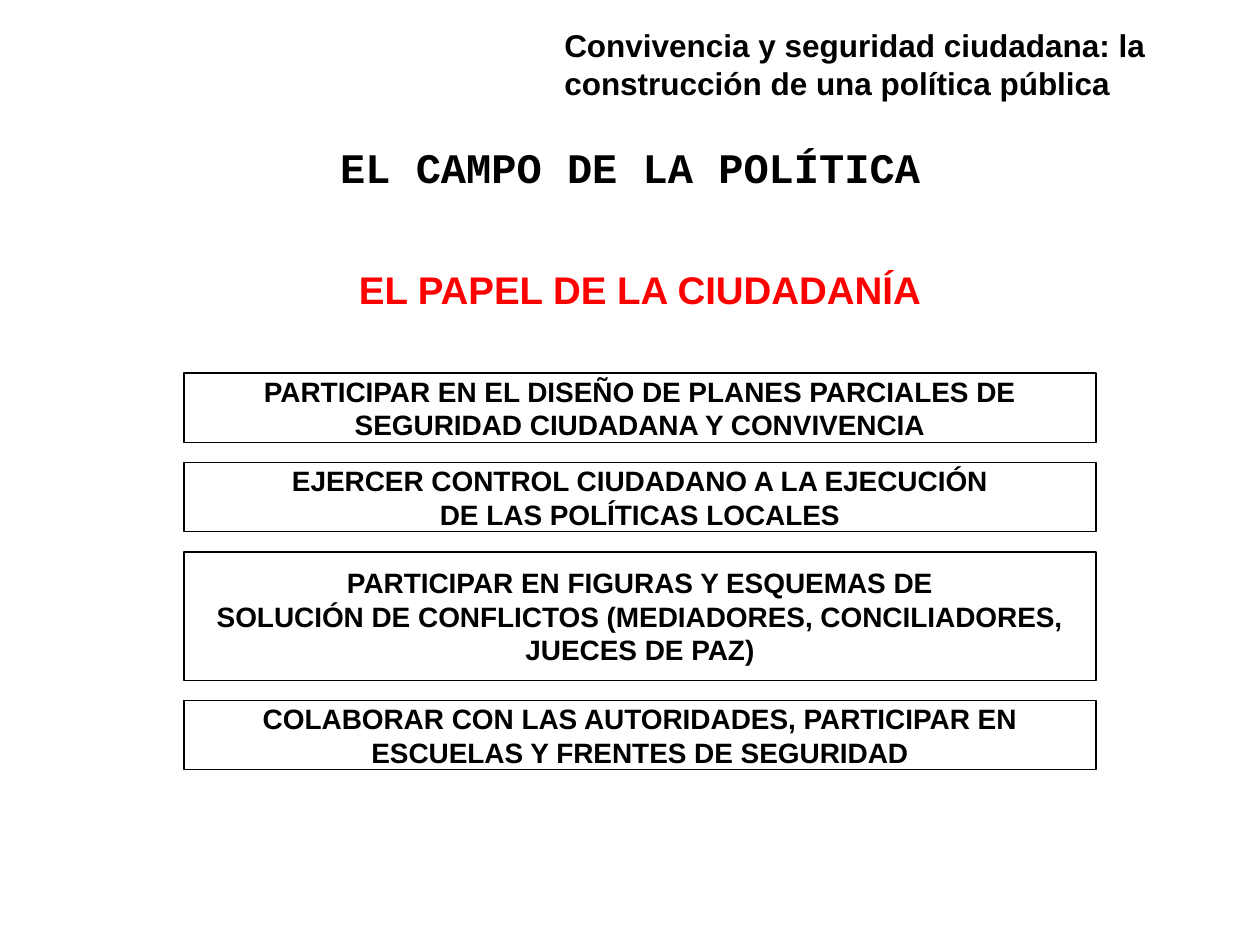
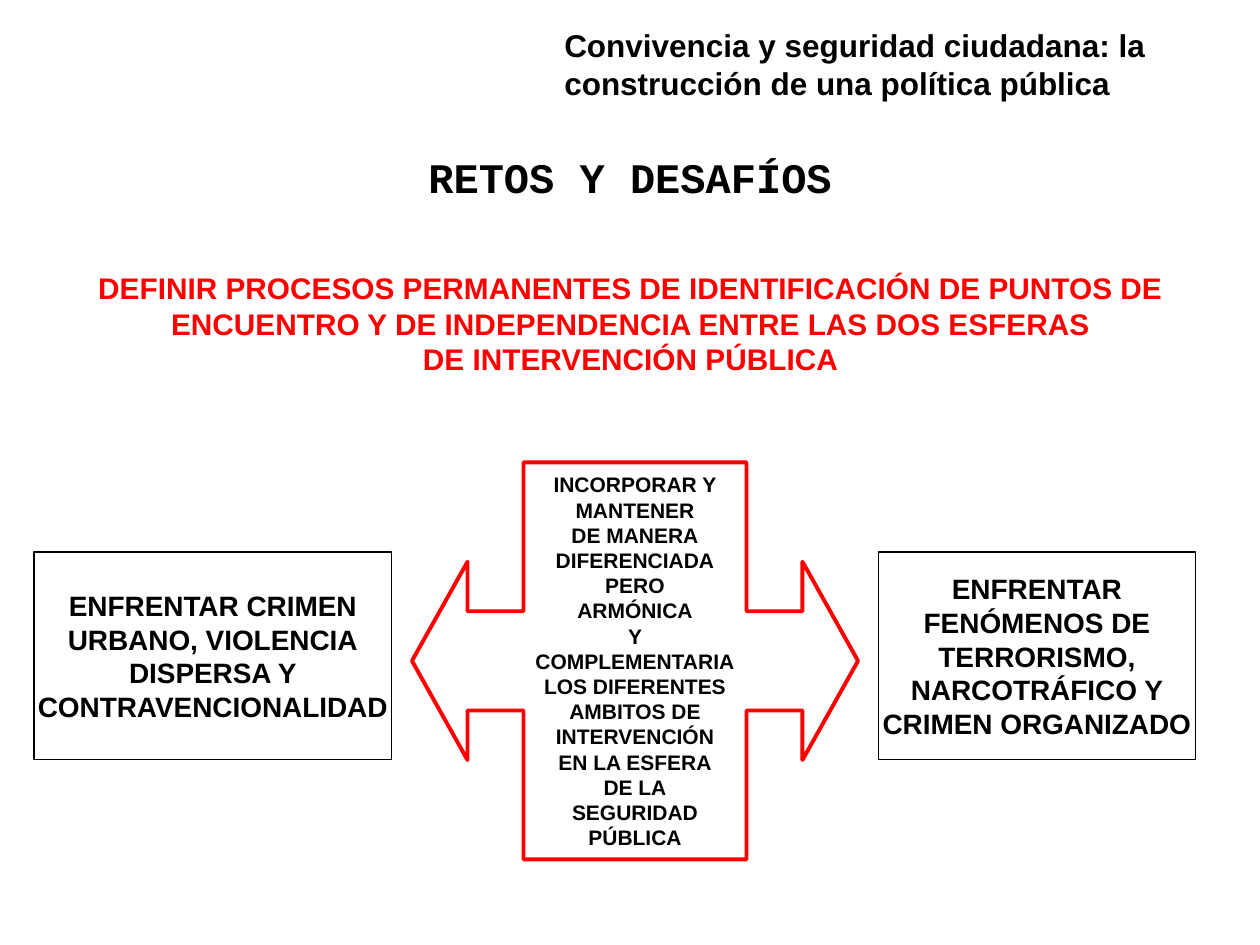
from pptx import Presentation
from pptx.dml.color import RGBColor
from pptx.enum.shapes import MSO_SHAPE as Shape
from pptx.enum.text import MSO_ANCHOR as Anchor, MSO_AUTO_SIZE as AutoSize, PP_ALIGN as Align
from pptx.util import Inches, Pt

COLORS = {"ink": "000000", "accent": "FF0000", "paper": "FFFFFF"}
BODY_FONT, TITLE_FONT = "Arial", "Courier New"
COLUMNS, ROWS = 100, 75
GAP = 1.6
HEADER = "Convivencia y seguridad ciudadana: la construcción de una política pública"


class SlideBuilder:
    """Holds the deck, its style and the slide being filled; places are in grid columns and rows."""

    def __init__(self):
        self.deck = Presentation()
        self.deck.slide_width, self.deck.slide_height = Inches(10), Inches(7.5)
        self.page = None

    def area(self, column, row, columns, rows):
        across = self.deck.slide_width / COLUMNS
        down = self.deck.slide_height / ROWS
        return [round(n) for n in (column * across, row * down, columns * across, rows * down)]

    def color(self, name):
        return RGBColor.from_string(COLORS[name])

    def set_text(self, box, text, size, color="ink", font=BODY_FONT, align=Align.CENTER,
                 anchor=Anchor.MIDDLE, wrap=False):
        frame = box.text_frame
        frame.text = text
        frame.auto_size = AutoSize.NONE
        frame.word_wrap = wrap
        frame.vertical_anchor = anchor
        for para in frame.paragraphs:
            para.alignment = align
            for span in para.runs:
                span.font.name, span.font.size, span.font.bold = font, Pt(size), True
                span.font.color.rgb = self.color(color)

    def start(self, title, row, rows):
        """Adds a page with its title and the shared header."""
        self.page = self.deck.slides.add_slide(self.deck.slide_layouts[5])
        self.page.background.fill.solid()
        self.page.background.fill.fore_color.rgb = self.color("paper")
        heading = self.page.shapes.title
        heading.left, heading.top, heading.width, heading.height = self.area(5, row, 90, rows)
        self.set_text(heading, title, 24, font=TITLE_FONT, anchor=Anchor.TOP, wrap=True)
        heading.text_frame.margin_top = Inches(0.13)
        self.label(HEADER, (43.8, 1.6, 53.5, 6.8), 18, align=Align.LEFT,
                   anchor=Anchor.TOP, wrap=True)

    def label(self, text, place, size, **style):
        self.set_text(self.page.shapes.add_textbox(*self.area(*place)), text, size, **style)

    def outline(self, text, place, size=16, kind=Shape.RECTANGLE, line="ink", weight=0.75):
        """Adds an unfilled shape with a coloured border and centred text."""
        box = self.page.shapes.add_shape(kind, *self.area(*place))
        box.shadow.inherit = False
        box.fill.background()
        box.line.color.rgb = self.color(line)
        box.line.width = Pt(weight)
        self.set_text(box, text, size)
        return box


def add_citizen_role(builder):
    builder.start("EL CAMPO DE LA POLÍTICA", 9.9, 3.1)
    builder.label("EL PAPEL DE LA CIUDADANÍA", (18.5, 20.2, 64.6, 5.5), 22, color="accent")
    duties = [
        ("PARTICIPAR EN EL DISEÑO DE PLANES PARCIALES DE\n"
         "SEGURIDAD CIUDADANA Y CONVIVENCIA", 5.5),
        ("EJERCER CONTROL CIUDADANO A LA EJECUCIÓN\nDE LAS POLÍTICAS LOCALES", 5.5),
        ("PARTICIPAR EN FIGURAS Y ESQUEMAS DE\n"
         "SOLUCIÓN DE CONFLICTOS (MEDIADORES, CONCILIADORES,\nJUECES DE PAZ)", 10.2),
        ("COLABORAR CON LAS AUTORIDADES, PARTICIPAR EN\n"
         "ESCUELAS Y FRENTES DE SEGURIDAD", 5.5),
    ]
    row = 29.6
    for duty, rows in duties:
        builder.outline(duty, (14.6, row, 72.4, rows))
        row += rows + GAP


def add_challenges(builder):
    builder.start("RETOS Y DESAFÍOS", 10.7, 4.8)
    builder.label("DEFINIR PROCESOS PERMANENTES DE IDENTIFICACIÓN DE PUNTOS DE\n"
                  "ENCUENTRO Y DE INDEPENDENCIA ENTRE LAS DOS ESFERAS\n"
                  "DE INTERVENCIÓN PÚBLICA", (27.2, 24.1, 45.7, 3.1), 17, color="accent")
    crime_column, crime_width, arrow_width = 2.7, 28.4, 35.4
    arrow_column = crime_column + crime_width + GAP
    terror_column = arrow_column + arrow_width + GAP
    arrow = builder.outline(
        "INCORPORAR Y\nMANTENER\nDE MANERA\nDIFERENCIADA\nPERO\nARMÓNICA\nY\nCOMPLEMENTARIA\n"
        "LOS DIFERENTES\nAMBITOS DE\nINTERVENCIÓN\nEN LA ESFERA\nDE LA\nSEGURIDAD\nPÚBLICA",
        (arrow_column, 36.7, arrow_width, 31.5), 12,
        Shape.LEFT_RIGHT_ARROW_CALLOUT, "accent", 2.25)
    for index, share in enumerate((0.25, 0.25, 0.14, 0.5)):
        arrow.adjustments[index] = share
    builder.outline("ENFRENTAR CRIMEN\nURBANO, VIOLENCIA\nDISPERSA Y\nCONTRAVENCIONALIDAD",
                    (crime_column, 43.8, crime_width, 16.5))
    builder.outline("ENFRENTAR\nFENÓMENOS DE\nTERRORISMO,\nNARCOTRÁFICO Y\nCRIMEN ORGANIZADO",
                    (terror_column, 43.8, 25.2, 16.5))


def main():
    builder = SlideBuilder()
    add_citizen_role(builder)
    add_challenges(builder)
    builder.deck.save("out.pptx")


if __name__ == "__main__":
    main()
